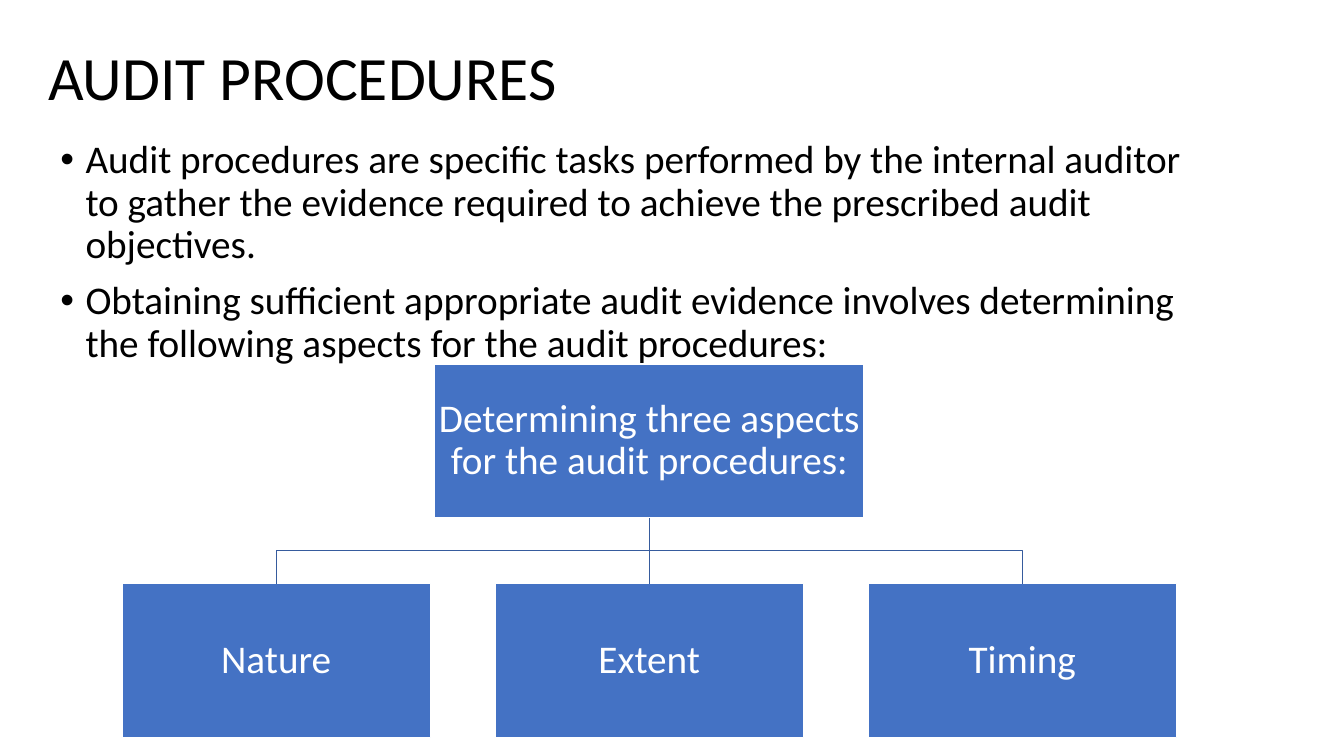
"""Build the audit procedures slide: title, two bullets and a small hierarchy."""
from dataclasses import dataclass

from lxml import etree
from pptx import Presentation
from pptx.dml.color import RGBColor
from pptx.enum.shapes import MSO_CONNECTOR, MSO_SHAPE
from pptx.enum.text import MSO_ANCHOR, PP_ALIGN
from pptx.oxml.ns import qn
from pptx.shapes.autoshape import Shape
from pptx.slide import Slide
from pptx.text.text import TextFrame
from pptx.util import Pt

RECT = MSO_SHAPE.RECTANGLE
STRAIGHT = MSO_CONNECTOR.STRAIGHT
MIDDLE, TOP = MSO_ANCHOR.MIDDLE, MSO_ANCHOR.TOP
LEFT, CENTER = PP_ALIGN.LEFT, PP_ALIGN.CENTER
BOTTOM_SITE, TOP_SITE = 2, 0
PX = 9144


@dataclass(frozen=True)
class Theme:
    font: str = "Calibri"
    title_size: int = 44
    body_size: int = 28
    ink: RGBColor = RGBColor(0, 0, 0)
    paper: RGBColor = RGBColor(255, 255, 255)
    box: RGBColor = RGBColor(0x44, 0x72, 0xC4)
    link: RGBColor = RGBColor(0x36, 0x5B, 0x9D)


@dataclass(frozen=True)
class Box:
    text: str
    x: int
    y: int
    w: int
    h: int

    @property
    def center(self) -> int:
        return self.x + self.w // 2

    @property
    def bottom(self) -> int:
        return self.y + self.h

    def emu(self) -> tuple[int, int, int, int]:
        return self.x * PX, self.y * PX, self.w * PX, self.h * PX


THEME = Theme()
TITLE = Box("AUDIT PROCEDURES", 38, 7, 1150, 145)
BODY = Box("", 50, 134, 1150, 547)
BULLETS = (
    "Audit procedures are specific tasks performed by the internal auditor "
    "to gather the evidence required to achieve the prescribed audit objectives.",
    "Obtaining sufficient appropriate audit evidence involves determining "
    "the following aspects for the audit procedures:",
)
INDENT = 25
ROOT = Box("Determining three aspects for the audit procedures:", 431, 361, 426, 153)
ASPECTS = [
    Box(name, 121 + 370 * i, 579, 306, 153)
    for i, name in enumerate(("Nature", "Extent", "Timing"))
]


def add_paragraph(tf: TextFrame, text: str, size: int, color: RGBColor,
                  align: PP_ALIGN = LEFT, bullet: bool = False) -> None:
    first = tf.paragraphs[0]
    p = tf.add_paragraph() if first.runs else first
    p.alignment = align
    p.line_spacing = 0.9
    if bullet:
        p.space_before = Pt(10)
        pPr = p._p.get_or_add_pPr()
        pPr.set("marL", str(INDENT * PX))
        pPr.set("indent", str(-INDENT * PX))
        etree.SubElement(pPr, qn("a:buFont")).set("typeface", "Arial")
        etree.SubElement(pPr, qn("a:buChar")).set("char", "•")
    r = p.add_run()
    r.text = text
    r.font.name = THEME.font
    r.font.size = Pt(size)
    r.font.color.rgb = color


def add_text_area(s: Slide, box: Box, anchor: MSO_ANCHOR) -> TextFrame:
    tf = s.shapes.add_textbox(*box.emu()).text_frame
    tf.word_wrap = True
    tf.vertical_anchor = anchor
    return tf


def add_box(s: Slide, box: Box) -> Shape:
    sp = s.shapes.add_shape(RECT, *box.emu())
    sp.shadow.inherit = False
    sp.fill.solid()
    sp.fill.fore_color.rgb = THEME.box
    sp.line.color.rgb = THEME.paper
    sp.line.width = Pt(1)
    tf = sp.text_frame
    tf.word_wrap = True
    tf.vertical_anchor = MIDDLE
    tf.margin_left = tf.margin_right = tf.margin_top = tf.margin_bottom = 2 * PX
    add_paragraph(tf, box.text, THEME.body_size, THEME.paper, CENTER)
    return sp


def add_straight_link(s: Slide, parent: Shape, child: Shape) -> None:
    link = s.shapes.add_connector(STRAIGHT, 0, 0, 0, 0)
    link.begin_connect(parent, BOTTOM_SITE)
    link.end_connect(child, TOP_SITE)
    link.line.color.rgb = THEME.link
    link.line.width = Pt(1)
    etree.SubElement(link._element.spPr, qn("a:effectLst"))


def add_elbow_link(s: Slide, parent: Box, child: Box) -> None:
    bend = (parent.bottom + child.y) // 2
    path = s.shapes.build_freeform(parent.center, parent.bottom, scale=PX)
    path.add_line_segments(
        [(parent.center, bend), (child.center, bend), (child.center, child.y)],
        close=False,
    )
    link = path.convert_to_shape()
    link.shadow.inherit = False
    link.fill.background()
    link.line.color.rgb = THEME.link
    link.line.width = Pt(1)


def main() -> None:
    prs = Presentation()
    prs.slide_width, prs.slide_height = 1333 * PX, 750 * PX
    s = prs.slides.add_slide(prs.slide_layouts[6])

    title = add_text_area(s, TITLE, MIDDLE)
    add_paragraph(title, TITLE.text, THEME.title_size, THEME.ink)
    body = add_text_area(s, BODY, TOP)
    for text in BULLETS:
        add_paragraph(body, text, THEME.body_size, THEME.ink, bullet=True)

    root = add_box(s, ROOT)
    for aspect in ASPECTS:
        sp = add_box(s, aspect)
        if aspect.center == ROOT.center:
            add_straight_link(s, root, sp)
        else:
            add_elbow_link(s, ROOT, aspect)

    prs.save("out.pptx")


if __name__ == "__main__":
    main()
